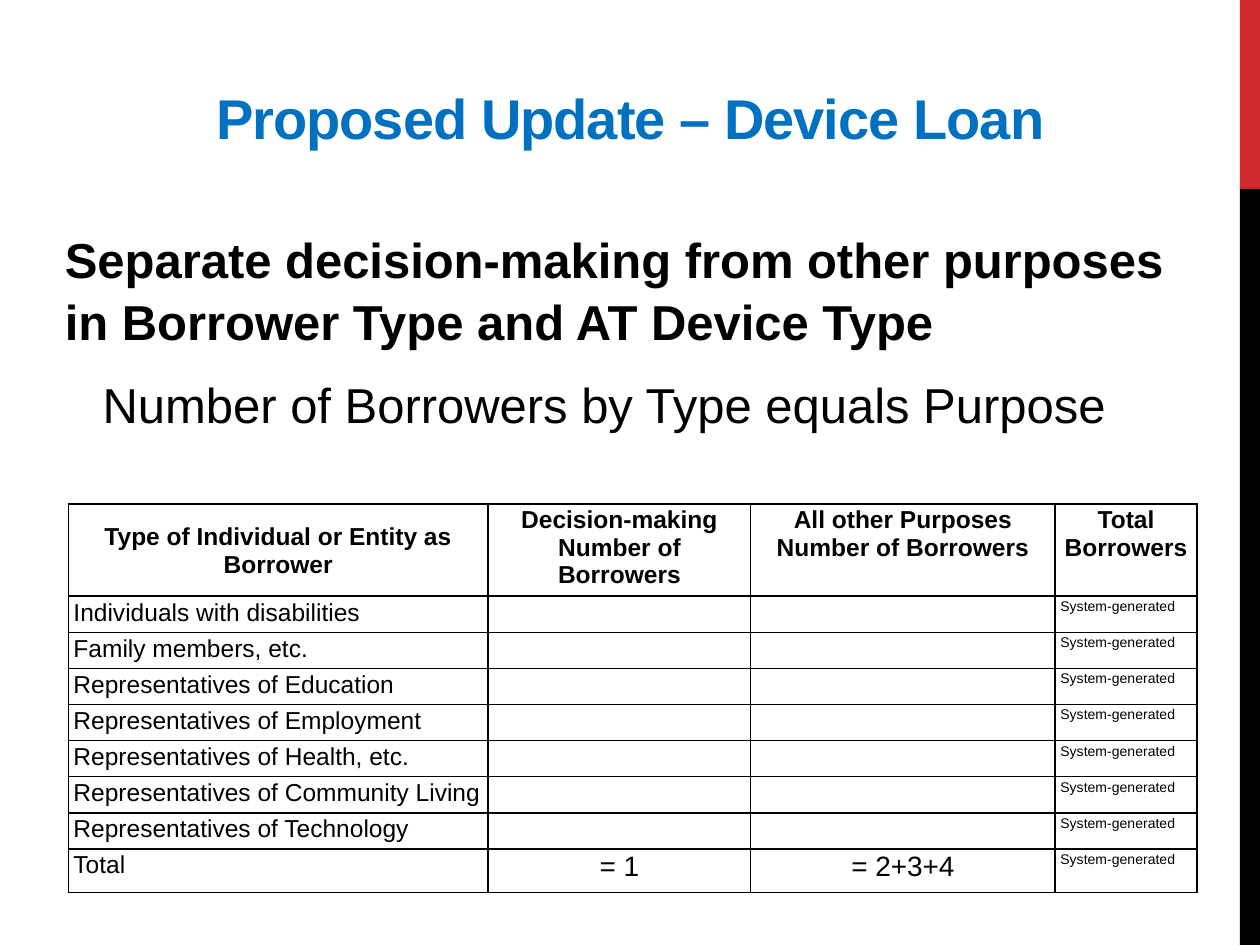
import pptx
import pptx.util
import pptx.dml.color
import pptx.enum.shapes
import pptx.enum.text
import pptx.oxml
import pptx.oxml.ns

Pt = pptx.util.Pt
RGB = pptx.dml.color.RGBColor.from_string
ALIGN = pptx.enum.text.PP_ALIGN
ANCHOR = pptx.enum.text.MSO_ANCHOR

THEME = {
    "font": "Arial",
    "title": "0070C0", "text": "000000", "accent": "D1282E",
    "title_size": 32, "body_size": 28, "cell_size": 14, "sum_size": 16, "note_size": 8,
}

# Content
TITLE = "Proposed Update – Device Loan"
PROPOSAL = "Separate decision-making from other purposes in Borrower Type and AT Device Type"
RULE = "Number of Borrowers by Type equals Purpose"
HEADERS = [
    "Type of Individual or Entity as Borrower",
    "Decision-making Number of Borrowers",
    "All other Purposes Number of Borrowers",
    "Total Borrowers",
]
BORROWERS = [
    "Individuals with disabilities",
    "Family members, etc.",
    "Representatives of Education",
    "Representatives of Employment",
    "Representatives of Health, etc.",
    "Representatives of Community Living",
    "Representatives of Technology",
]
GENERATED = "System-generated"
ROWS = [HEADERS]
ROWS += [[borrower, "", "", GENERATED] for borrower in BORROWERS]
ROWS += [["Total", "= 1", "= 2+3+4", GENERATED]]

# Layout in points
SLIDE = (720, 540)
SIDE_BARS = [("accent", 0, 108), ("text", 108, 432)]
SIDE_BAR_WIDTH = 11.5
TITLE_BOX = (36, 24, 648, 66)
BODY_BOX = (30, 126, 654, 126)
TABLE_AT = (39, 288)
COLUMN_WIDTHS = [240, 150, 174, 81]
ROW_HEIGHTS = [49.2] + [20.64] * len(BORROWERS) + [25]
CELL_MARGINS = (3, 1.5, 3, 0.75)


def points(values):
    return [Pt(value) for value in values]


def style(paragraph, size, bold=False, color="text"):
    for run in paragraph.runs:
        run.font.name = THEME["font"]
        run.font.size = Pt(size)
        run.font.bold = bold
        run.font.color.rgb = RGB(THEME[color])


def add_borders(cell):
    properties = cell._tc.get_or_add_tcPr()
    for index, side in enumerate(("lnL", "lnR", "lnT", "lnB")):
        properties.insert(index, pptx.oxml.parse_xml(
            f'<a:{side} {pptx.oxml.ns.nsdecls("a")} w="{Pt(1)}"><a:solidFill>'
            f'<a:srgbClr val="{THEME["text"]}"/></a:solidFill></a:{side}>'))


def fill_cell(cell, text, row, column):
    cell.margin_left, cell.margin_top, cell.margin_right, cell.margin_bottom = points(CELL_MARGINS)
    cell.fill.background()
    add_borders(cell)
    cell.text_frame.text = text
    paragraph = cell.text_frame.paragraphs[0]
    header = row == 0
    if header or column in (1, 2):
        paragraph.alignment = ALIGN.CENTER
    if header and column == 0:
        cell.vertical_anchor = ANCHOR.MIDDLE
    size = THEME["cell_size"]
    if not header:
        size = [size, THEME["sum_size"], THEME["sum_size"], THEME["note_size"]][column]
    style(paragraph, size, bold=header)
    if not text:
        # Keep empty cells from stretching their row
        paragraph._p.append(pptx.oxml.parse_xml(
            f'<a:endParaRPr {pptx.oxml.ns.nsdecls("a")} sz="{THEME["cell_size"] * 100}"/>'))


def main():
    deck = pptx.Presentation()
    deck.slide_width, deck.slide_height = points(SLIDE)
    slide = deck.slides.add_slide(deck.slide_layouts[5])

    # Side bars
    for color, top, height in SIDE_BARS:
        bar = slide.shapes.add_shape(
            pptx.enum.shapes.MSO_SHAPE.RECTANGLE,
            *points((SLIDE[0] - SIDE_BAR_WIDTH, top, SIDE_BAR_WIDTH, height)))
        bar.shadow.inherit = False
        bar.fill.solid()
        bar.fill.fore_color.rgb = RGB(THEME[color])
        bar.line.fill.background()

    # Title
    title = slide.shapes.title
    title.left, title.top, title.width, title.height = points(TITLE_BOX)
    title.text_frame.text = TITLE
    title.text_frame.auto_size = pptx.enum.text.MSO_AUTO_SIZE.NONE
    title.text_frame.vertical_anchor = ANCHOR.BOTTOM
    heading = title.text_frame.paragraphs[0]
    heading.alignment = ALIGN.CENTER
    style(heading, THEME["title_size"], bold=True, color="title")
    heading.runs[0].font._element.set("spc", "-60")

    # Proposal and its rule
    body = slide.shapes.add_textbox(*points(BODY_BOX)).text_frame
    body.word_wrap = True
    body.text = f"{PROPOSAL}\n{RULE}"
    for level, paragraph in enumerate(body.paragraphs):
        paragraph.line_spacing = 1.05
        paragraph.space_after = Pt(12)
        paragraph.level = level
        paragraph._p.get_or_add_pPr().set("marL", str(Pt(21.6 * level)))
        style(paragraph, THEME["body_size"], bold=level == 0)

    # Borrower table
    table = slide.shapes.add_table(
        len(ROWS), len(HEADERS),
        *points((*TABLE_AT, sum(COLUMN_WIDTHS), sum(ROW_HEIGHTS)))).table
    table.horz_banding = False
    for column, width in zip(table.columns, COLUMN_WIDTHS):
        column.width = Pt(width)
    for row, height in zip(table.rows, ROW_HEIGHTS):
        row.height = Pt(height)
    for row, texts in enumerate(ROWS):
        for column, text in enumerate(texts):
            fill_cell(table.cell(row, column), text, row, column)

    deck.save("out.pptx")


if __name__ == "__main__":
    main()
